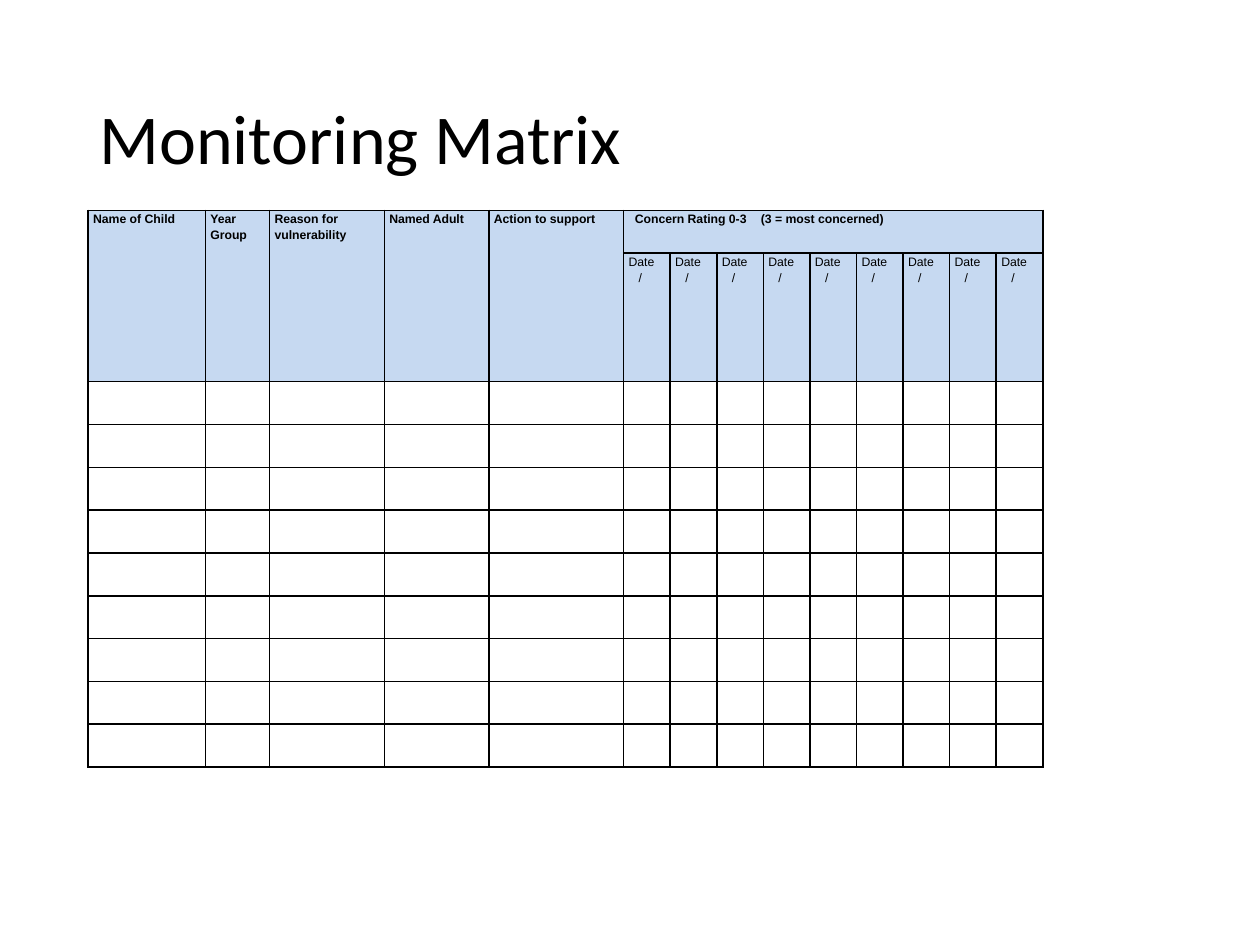
from pptx import Presentation
from pptx.dml.color import RGBColor
from pptx.enum.text import MSO_ANCHOR, PP_ALIGN
from pptx.oxml.ns import qn
from pptx.util import Inches, Pt
from lxml import etree

LEFT = PP_ALIGN.LEFT
MIDDLE = MSO_ANCHOR.MIDDLE
BLACK = RGBColor(0x00, 0x00, 0x00)
HEADER_BLUE = RGBColor(0xC6, 0xD9, 0xF1)

HEADINGS = ["Name of Child", "Year Group", "Reason for\nvulnerability",
            "Named Adult", "Action to support"]
DATE_COUNT = 9
CHILD_COUNT = 9
COLUMN_WIDTHS = [0.93, 0.51, 0.91, 0.83, 1.07] + [0.37] * DATE_COUNT
ROW_HEIGHTS = [0.34, 1.02] + [0.34] * CHILD_COUNT


class MatrixSlide:
    title_font = "Calibri"
    table_font = "Arial"
    table_size = Pt(7)

    def __init__(self, presentation):
        self.slide = presentation.slides.add_slide(presentation.slide_layouts[5])

    def add_title(self, text, left, top, width, height):
        title = self.slide.shapes.title
        title.left, title.top = Inches(left), Inches(top)
        title.width, title.height = Inches(width), Inches(height)
        title.text_frame.text = text
        title.text_frame.vertical_anchor = MIDDLE
        paragraph = title.text_frame.paragraphs[0]
        paragraph.alignment = LEFT
        paragraph.line_spacing = 0.9
        font = paragraph.runs[0].font
        font.name, font.size = self.title_font, Pt(40)
        font.color.rgb = BLACK

    def add_grid(self, left, top, widths, heights):
        frame = self.slide.shapes.add_table(
            len(heights), len(widths), Inches(left), Inches(top),
            Inches(sum(widths)), Inches(sum(heights)))
        table = frame.table
        table.first_row = table.horz_banding = False
        for column, width in zip(table.columns, widths):
            column.width = Inches(width)
        for row, height in zip(table.rows, heights):
            row.height = Inches(height)
        for cell in table.iter_cells():
            cell.margin_left = cell.margin_right = Inches(0.04)
            cell.margin_top = cell.margin_bottom = 0
            self.add_borders(cell)
            cell.fill.background()
        return table

    def add_borders(self, cell):
        properties = cell._tc.get_or_add_tcPr()
        for side in ("a:lnL", "a:lnR", "a:lnT", "a:lnB"):
            line = etree.SubElement(properties, qn(side), w=str(Pt(1)))
            fill = etree.SubElement(line, qn("a:solidFill"))
            etree.SubElement(fill, qn("a:srgbClr"), val=str(BLACK))

    def fill_header(self, cell, text, bold=True):
        cell.fill.solid()
        cell.fill.fore_color.rgb = HEADER_BLUE
        cell.text_frame.text = text
        for paragraph in cell.text_frame.paragraphs:
            paragraph.line_spacing = 1.15
            for run in paragraph.runs:
                run.font.name, run.font.size = self.table_font, self.table_size
                run.font.bold = bold
                run.font.color.rgb = BLACK

    def indent(self, paragraph, distance, tab=None):
        properties = paragraph._p.get_or_add_pPr()
        properties.set("marL", str(Inches(distance)))
        properties.set("indent", "0")
        if tab:
            tabs = etree.SubElement(properties, qn("a:tabLst"))
            etree.SubElement(tabs, qn("a:tab"), pos=str(Inches(tab)), algn="l")


def main():
    presentation = Presentation()
    presentation.slide_width, presentation.slide_height = Inches(10), Inches(7.5)
    matrix = MatrixSlide(presentation)
    matrix.add_title("Monitoring Matrix", 0.69, 0.4, 8.62, 1.45)

    # Empty grid for the children
    table = matrix.add_grid(0.7, 1.67, COLUMN_WIDTHS, ROW_HEIGHTS)

    # Headings spanning both header rows
    for column, heading in enumerate(HEADINGS):
        cell = table.cell(0, column)
        cell.merge(table.cell(1, column))
        matrix.fill_header(cell, heading)

    # Concern rating heading above the date columns
    first_date = len(HEADINGS)
    rating = table.cell(0, first_date)
    rating.merge(table.cell(0, len(COLUMN_WIDTHS) - 1))
    matrix.fill_header(rating, "Concern Rating 0-3\t(3 = most concerned)")
    matrix.indent(rating.text_frame.paragraphs[0], 0.05, tab=1.02)

    # Date columns
    for column in range(first_date, len(COLUMN_WIDTHS)):
        cell = table.cell(1, column)
        matrix.fill_header(cell, "Date\n/", bold=False)
        matrix.indent(cell.text_frame.paragraphs[1], 0.08)

    presentation.save("out.pptx")


if __name__ == "__main__":
    main()
